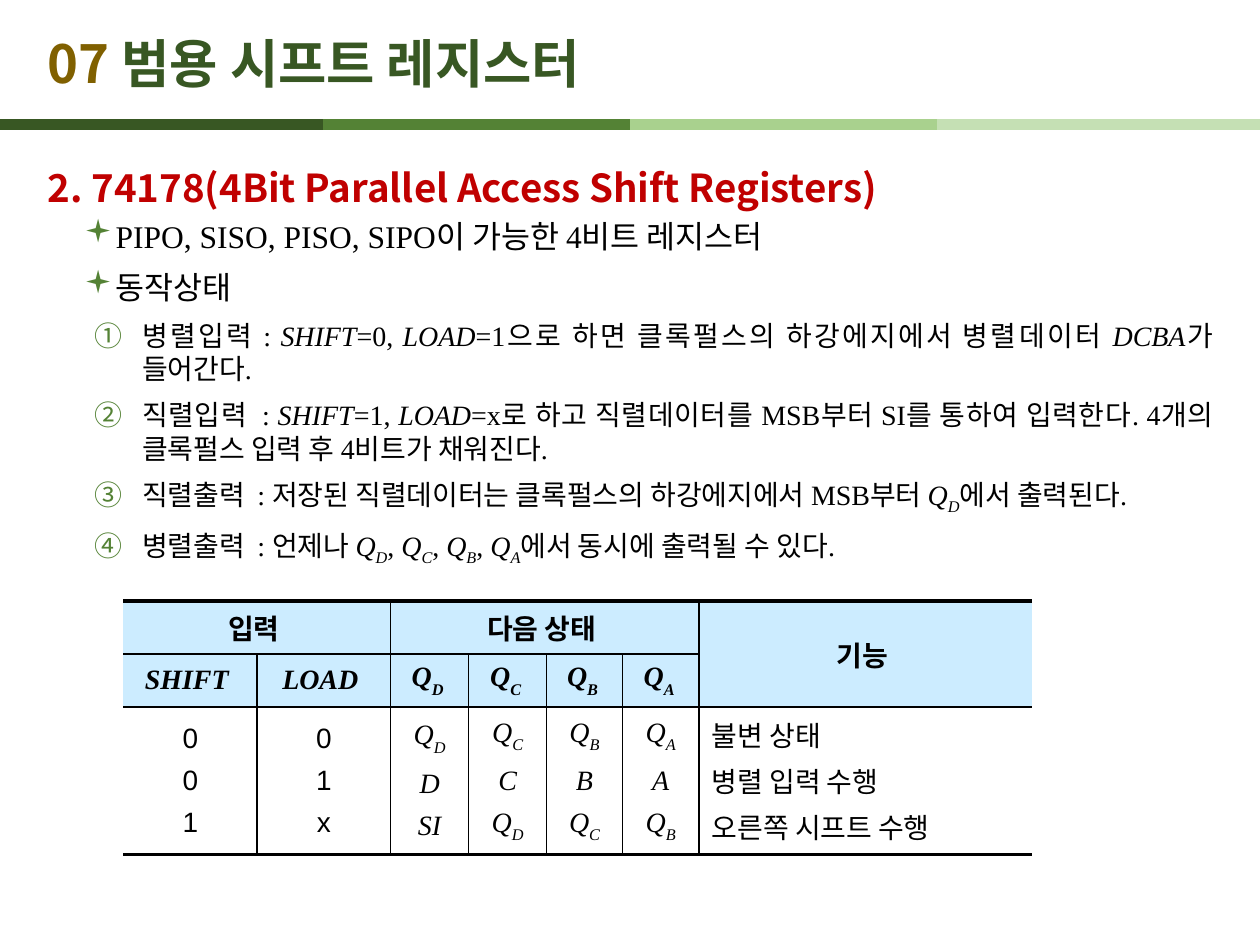
from dataclasses import dataclass

from lxml.etree import SubElement
from pptx import Presentation
from pptx.dml.color import RGBColor
from pptx.enum.shapes import MSO_CONNECTOR
from pptx.enum.text import MSO_ANCHOR, PP_ALIGN
from pptx.oxml.ns import qn
from pptx.util import Inches, Pt

SANS, SERIF, ARIAL = "Noto Sans CJK KR", "Times New Roman", "Arial"
BLACK, GREEN, HEADER_FILL = "000000", "548235", "CCECFF"
LEFT, CENTER, JUSTIFY = PP_ALIGN.LEFT, PP_ALIGN.CENTER, PP_ALIGN.JUSTIFY


@dataclass
class Band:
    start: float
    color: str


@dataclass
class Item:
    text: str
    size: int = 16
    numbered: bool = True


@dataclass
class Head:
    row: int
    col: int
    text: str
    last_row: int
    last_col: int


BANDS = [Band(0, "385723"), Band(2.56, GREEN), Band(5, "A9D18E"), Band(7.44, "C5E0B4")]
BAND_WIDTH, BAND_Y = 2.56, 0.99
MARGIN = 0.28

# In these texts *...* is italic and ~ lowers the letter after it.
ITEMS = [
    Item("PIPO, SISO, PISO, SIPO이 가능한 4비트 레지스터", 18, False),
    Item("동작상태", 18, False),
    Item("병렬입력 : *SHIFT*=0, *LOAD*=1으로 하면 클록펄스의 하강에지에서 "
         "병렬데이터 *DCBA*가 들어간다."),
    Item("직렬입력  : *SHIFT*=1, *LOAD*=х로 하고 직렬데이터를 MSB부터 SI를 통하여 "
         "입력한다. 4개의 클록펄스 입력 후 4비트가 채워진다."),
    Item("직렬출력  : 저장된 직렬데이터는 클록펄스의 하강에지에서 MSB부터 *Q~D*에서 출력된다."),
    Item("병렬출력  : 언제나 *Q~D*, *Q~C*, *Q~B*, *Q~A*에서 동시에 출력될 수 있다."),
]

COLS = [1.06, 1.06, 0.62, 0.62, 0.6, 0.61, 2.64]
ROWS = [0.42, 0.42, 1.13]
SUBHEADS = ["*SHIFT *", "*LOAD *", "*Q~D *", "*Q~C *", "*Q~B *", "*Q~A *"]
HEADS = [
    Head(0, 0, "입력 ", 0, 1),
    Head(0, 2, "다음 상태 ", 0, 5),
    Head(0, 6, "기능 ", 1, 6),
    *(Head(1, c, text, 1, c) for c, text in enumerate(SUBHEADS)),
]
STATES = [
    ["0", "0", "1"],
    ["0", "1", "x"],
    ["*Q~D*", "*D*", "*SI*"],
    ["*Q~C*", "*C*", "*Q~D*"],
    ["*Q~B*", "*B*", "*Q~C*"],
    ["*Q~A*", "*A*", "*Q~B*"],
    ["불변 상태", "병렬 입력 수행", "오른쪽 시프트 수행"],
]


def rgb(color: str) -> RGBColor:
    return RGBColor.from_string(color)


def add_run(p, text: str, *, size=16, font=SERIF, color=BLACK, bold=False,
            italic=False, base=0) -> None:
    r = p.add_run()
    r.text = text
    f = r.font
    f.size, f.name, f.bold, f.italic = Pt(size), font, bold, italic
    f.color.rgb = rgb(color)
    rpr = r._r.get_or_add_rPr()
    rpr.set("kern", "0")
    SubElement(rpr, qn("a:ea"), typeface=SANS)
    if base:
        rpr.set("baseline", str(base * 1000))


def add_marked(p, text: str, *, base=-25, **fmt) -> None:
    for i, part in enumerate(text.split("*")):
        italic = i % 2 == 1
        normal, *lowered = part.split("~")
        if normal:
            add_run(p, normal, italic=italic, **fmt)
        for letter in lowered:
            add_run(p, letter, italic=italic, base=base, **fmt)


def paragraph(tf, first: bool, *, align=LEFT, before=0.0, after=0.0, spacing=1.0):
    p = tf.paragraphs[0] if first else tf.add_paragraph()
    p.alignment, p.line_spacing = align, spacing
    p.space_before, p.space_after = Pt(0 if first else before), Pt(after)
    return p


def set_bullet(p, numbered: bool) -> None:
    ppr = p._p.get_or_add_pPr()
    left, hang = (0.75, 0.38) if numbered else (0.49, 0.2)
    ppr.set("marL", str(Inches(left)))
    ppr.set("indent", str(-Inches(hang)))
    SubElement(SubElement(ppr, qn("a:buClr")), qn("a:srgbClr"), val=GREEN)
    if numbered:
        SubElement(ppr, qn("a:buAutoNum"), type="circleNumDbPlain")
    else:
        SubElement(ppr, qn("a:buFont"), typeface="Wingdings")
        SubElement(ppr, qn("a:buChar"), char="▪")


def add_band(s, band: Band) -> None:
    line = s.shapes.add_connector(
        MSO_CONNECTOR.STRAIGHT, Inches(band.start), Inches(BAND_Y),
        Inches(band.start + BAND_WIDTH), Inches(BAND_Y))
    line.line.color.rgb = rgb(band.color)
    line.line.width = Pt(6)
    SubElement(line._element.spPr, qn("a:effectLst"))


def set_title(s) -> None:
    title = s.shapes.title
    title.left, title.top = Inches(MARGIN), Inches(0.2)
    title.width, title.height = Inches(8.27), Inches(0.6)
    tf = title.text_frame
    tf.vertical_anchor = MSO_ANCHOR.MIDDLE
    p = paragraph(tf, True)
    add_run(p, "07 ", size=30, font=SANS, color="806000", bold=True)
    add_run(p, "범용 시프트 레지스터", size=30, font=SANS, color="385723", bold=True)


def add_body(s) -> None:
    box = s.shapes.add_textbox(Inches(MARGIN), Inches(1.07), Inches(9.45), Inches(3.6))
    tf = box.text_frame
    tf.word_wrap = True
    add_run(paragraph(tf, True, spacing=1.5),
            "2. 74178(4Bit Parallel Access Shift Registers)",
            size=22, font=SANS, color="C00000", bold=True)
    for item in ITEMS:
        p = paragraph(tf, False, align=JUSTIFY if item.numbered else LEFT,
                      before=item.size * 0.2, after=4)
        set_bullet(p, item.numbered)
        add_marked(p, item.text, size=item.size)


def set_borders(cell, widths: dict[str, float]) -> None:
    tcpr = cell._tc.get_or_add_tcPr()
    for side in "LRTB":
        width = widths[side]
        ln = SubElement(tcpr, qn(f"a:ln{side}"), w=str(Pt(width)))
        if width:
            SubElement(SubElement(ln, qn("a:solidFill")), qn("a:srgbClr"), val=BLACK)
        else:
            SubElement(ln, qn("a:noFill"))


def style_cell(cell, row: int, first_col: int, last_col: int) -> None:
    set_borders(cell, {
        "L": 1 if first_col else 0,
        "R": 1 if last_col < len(COLS) - 1 else 0,
        "T": 1 if row else 2.25,
        "B": 2.25 if row == len(ROWS) - 1 else 1,
    })
    cell.vertical_anchor = MSO_ANCHOR.MIDDLE


def add_state_table(s) -> None:
    frame = s.shapes.add_table(len(ROWS), len(COLS), Inches(0.98), Inches(4.77),
                               Inches(sum(COLS)), Inches(sum(ROWS)))
    table = frame.table
    table.first_row = table.horz_banding = False
    for col, width in zip(table.columns, COLS):
        col.width = Inches(width)
    for row, height in zip(table.rows, ROWS):
        row.height = Inches(height)
    for h in HEADS:
        cell = table.cell(h.row, h.col)
        if (h.row, h.col) != (h.last_row, h.last_col):
            cell.merge(table.cell(h.last_row, h.last_col))
        style_cell(cell, h.row, h.col, h.last_col)
        cell.fill.solid()
        cell.fill.fore_color.rgb = rgb(HEADER_FILL)
        p = paragraph(cell.text_frame, True, align=CENTER)
        add_marked(p, h.text, bold=True, base=-30)
    for c, lines in enumerate(STATES):
        cell = table.cell(2, c)
        style_cell(cell, 2, c, c)
        cell.fill.background()
        is_function = c == len(COLS) - 1
        for i, text in enumerate(lines):
            p = paragraph(cell.text_frame, i == 0, before=3.2,
                          align=JUSTIFY if is_function else CENTER,
                          after=0 if is_function else 3.2)
            add_marked(p, text, font=ARIAL if c < 2 else SERIF, base=-30)


def main() -> None:
    prs = Presentation()
    prs.slide_width, prs.slide_height = Inches(10), Inches(7.5)
    s = prs.slides.add_slide(prs.slide_layouts[5])
    for band in BANDS:
        add_band(s, band)
    set_title(s)
    add_body(s)
    add_state_table(s)
    prs.save("out.pptx")


if __name__ == "__main__":
    main()
